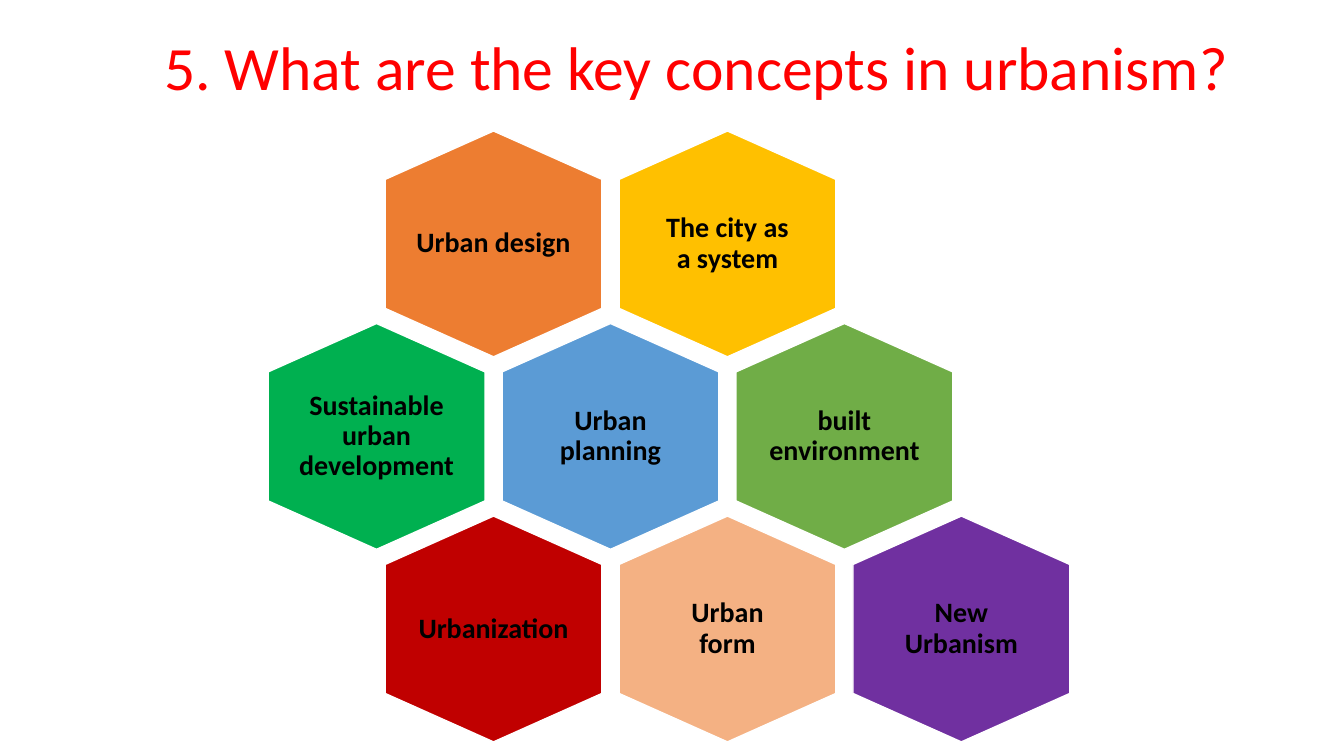
from dataclasses import dataclass

from pptx import Presentation
from pptx.dml.color import RGBColor
from pptx.enum.text import MSO_ANCHOR, MSO_AUTO_SIZE, PP_ALIGN
from pptx.slide import Slide
from pptx.text.text import TextFrame
from pptx.util import Inches, Pt

CENTER = PP_ALIGN.CENTER
MIDDLE = MSO_ANCHOR.MIDDLE
BOTTOM = MSO_ANCHOR.BOTTOM
NO_AUTOFIT = MSO_AUTO_SIZE.NONE

WHITE = RGBColor(0xFF, 0xFF, 0xFF)
BLACK = RGBColor(0x00, 0x00, 0x00)
RED = RGBColor(0xFF, 0x00, 0x00)
GOLD = RGBColor(0xFF, 0xC0, 0x00)
ORANGE = RGBColor(0xED, 0x7D, 0x31)
BLUE = RGBColor(0x5B, 0x9B, 0xD5)
LIGHT_GREEN = RGBColor(0x70, 0xAD, 0x47)
PEACH = RGBColor(0xF4, 0xB1, 0x83)
DARK_RED = RGBColor(0xC0, 0x00, 0x00)
GREEN = RGBColor(0x00, 0xB0, 0x50)
PURPLE = RGBColor(0x70, 0x30, 0xA0)

FONT = "Calibri"
GRID_LEFT, GRID_TOP = 2.66, 1.3
HALF_COLUMN, ROW_STEP = 1.16, 1.91
HEXAGON_WIDTH, HEXAGON_HEIGHT = 2.15, 2.24
SHOULDER = 0.48
WIDE_INSET, NARROW_INSET = 0.44, 0.3


@dataclass(frozen=True)
class Concept:
    label: str
    row: int
    half_column: int
    color: RGBColor
    inset: float


CONCEPTS = [
    Concept("The city as a system", 0, 3, GOLD, WIDE_INSET),
    Concept("Urban design", 0, 1, ORANGE, NARROW_INSET),
    Concept("Urban planning", 1, 2, BLUE, WIDE_INSET),
    Concept("built environment", 1, 4, LIGHT_GREEN, NARROW_INSET),
    Concept("Urban form", 2, 3, PEACH, WIDE_INSET),
    Concept("Urbanization", 2, 1, DARK_RED, NARROW_INSET),
    Concept("Sustainable urban development", 1, 0, GREEN, NARROW_INSET),
    Concept("New Urbanism", 2, 5, PURPLE, WIDE_INSET),
]


def write_text(frame: TextFrame, text: str, size: int, color: RGBColor, bold: bool) -> None:
    frame.word_wrap = True
    frame.auto_size = NO_AUTOFIT
    paragraph = frame.paragraphs[0]
    paragraph.alignment = CENTER
    paragraph.line_spacing = 0.9
    paragraph.space_before = Pt(0)
    run = paragraph.add_run()
    run.text = text
    run.font.name = FONT
    run.font.size = Pt(size)
    run.font.bold = bold
    run.font.color.rgb = color


def add_title(slide: Slide, text: str) -> None:
    title = slide.shapes.title
    title.left, title.top = Inches(1.27), Inches(0.55)
    title.width, title.height = Inches(11.28), Inches(0.53)
    title.text_frame.vertical_anchor = BOTTOM
    write_text(title.text_frame, text, 44, RED, False)


def add_concept(slide: Slide, concept: Concept) -> None:
    left = GRID_LEFT + concept.half_column * HALF_COLUMN
    top = GRID_TOP + concept.row * ROW_STEP
    right, bottom = left + HEXAGON_WIDTH, top + HEXAGON_HEIGHT
    middle = left + HEXAGON_WIDTH / 2
    corners = [
        (middle, top),
        (right, top + SHOULDER),
        (right, bottom - SHOULDER),
        (middle, bottom),
        (left, bottom - SHOULDER),
        (left, top + SHOULDER),
    ]
    points = [(Inches(x), Inches(y)) for x, y in corners]
    builder = slide.shapes.build_freeform(*points[0])
    builder.add_line_segments(points[1:], close=True)
    shape = builder.convert_to_shape()
    shape.shadow.inherit = False
    shape.fill.solid()
    shape.fill.fore_color.rgb = concept.color
    shape.line.color.rgb = WHITE
    shape.line.width = Pt(1)
    frame = shape.text_frame
    frame.vertical_anchor = MIDDLE
    frame.margin_left = frame.margin_right = Inches(concept.inset)
    frame.margin_top = frame.margin_bottom = Inches(concept.inset + 0.04)
    write_text(frame, concept.label, 20, BLACK, True)


def main() -> None:
    presentation = Presentation()
    presentation.slide_width = Inches(13.33)
    presentation.slide_height = Inches(7.5)
    slide = presentation.slides.add_slide(presentation.slide_layouts[5])
    add_title(slide, "5. What are the key concepts in urbanism?")
    for concept in CONCEPTS:
        add_concept(slide, concept)
    presentation.save("out.pptx")


if __name__ == "__main__":
    main()
